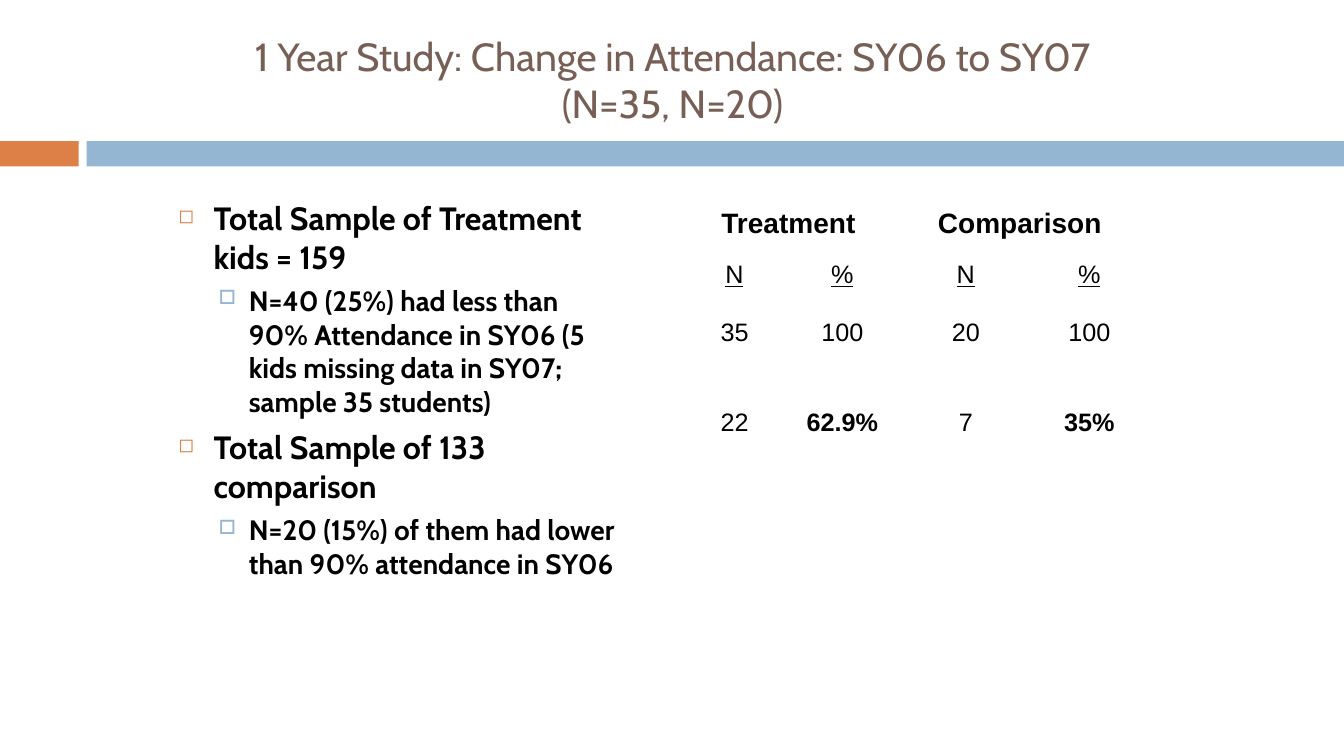
import pptx
import pptx.dml.color
import pptx.enum.shapes
import pptx.enum.text
import pptx.oxml.ns
import pptx.util
from lxml import etree

Inches, Pt = pptx.util.Inches, pptx.util.Pt
ANCHOR, ALIGN = pptx.enum.text.MSO_ANCHOR, pptx.enum.text.PP_ALIGN

# Content
TITLE = "1 Year Study: Change in Attendance: SY06 to SY07 (N=35, N=20)"
SAMPLES = [  # outline level, text
    (0, "Total Sample of Treatment kids = 159"),
    (1, "N=40 (25%) had less than 90% Attendance in SY06 "
        "(5 kids missing data in SY07; sample 35 students)"),
    (0, "Total Sample of 133 comparison"),
    (1, "N=20 (15%) of them had lower than 90% attendance in SY06"),
]
GROUPS = ["Treatment", "Comparison"]
ATTENDANCE = [
    ["N", "%", "N", "%"],
    ["35", "100", "20", "100"],
    ["22", "62.9%", "7", "35%"],
]
COLUMN_WIDTHS = [1.07, 1.07, 1.38, 1.07]
ROW_HEIGHTS = [0.75, 0.5, 0.57, 0.89]

# Look
ORANGE, BLUE, BROWN, BLACK = "DD8047", "94B6D2", "775F55", "000000"
BANDS = [(0, 0.78, ORANGE), (0.86, 12.47, BLUE)]  # left, width, colour
LEVELS = [
    dict(size=23, left=0.35, hang=0.35, before=7, bullet="◻", color=ORANGE, percent=60),
    dict(size=20, left=0.7, hang=0.3, before=5.5, bullet="□", color=BLUE, percent=70),
]


def rgb(value):
    return pptx.dml.color.RGBColor.from_string(value)


def format_runs(para, font, size, color, bold=False, underline=False):
    for span in para.runs:
        span.font.name = font
        span.font.size = Pt(size)
        span.font.color.rgb = rgb(color)
        span.font.bold = bold
        span.font.underline = underline


def set_indent(para, left, hang):
    properties = para._p.get_or_add_pPr()
    properties.set("marL", str(Inches(left)))
    properties.set("indent", str(-Inches(hang)))
    return properties


def add_bullet(properties, look):
    def add(parent, tag, **attributes):
        return etree.SubElement(parent, pptx.oxml.ns.qn(tag), **attributes)

    add(add(properties, "a:buClr"), "a:srgbClr", val=look["color"])
    add(properties, "a:buSzPct", val=str(look["percent"] * 1000))
    add(properties, "a:buChar", char=look["bullet"])


def fill_cell(cell, text, size, bold=False, underline=False):
    cell.text_frame.text = text
    cell.vertical_anchor = ANCHOR.BOTTOM
    para = cell.text_frame.paragraphs[0]
    para.alignment = ALIGN.CENTER
    set_indent(para, 0.3, 0.3)
    format_runs(para, "Arial", size, BLACK, bold, underline)


deck = pptx.Presentation()
deck.slide_width, deck.slide_height = Inches(13.33), Inches(7.5)
page = deck.slides.add_slide(deck.slide_layouts[5])

# Bands under the title
for left, width, color in BANDS:
    band = page.shapes.add_shape(pptx.enum.shapes.MSO_SHAPE.RECTANGLE,
                                 Inches(left), Inches(1.4), Inches(width), Inches(0.25))
    band.shadow.inherit = False
    band.fill.solid()
    band.fill.fore_color.rgb = rgb(color)
    band.line.fill.background()

# Title
title = page.shapes.title
title.left, title.top = Inches(2.17), Inches(0.25)
title.width, title.height = Inches(9), Inches(1.08)
title.text_frame.text = TITLE
title.text_frame.word_wrap = True
title.text_frame.auto_size = pptx.enum.text.MSO_AUTO_SIZE.NONE
title.text_frame.vertical_anchor = ANCHOR.MIDDLE
title.text_frame.paragraphs[0].alignment = ALIGN.CENTER
format_runs(title.text_frame.paragraphs[0], "Cabin", 28, BROWN)

# Attendance table
table = page.shapes.add_table(len(ROW_HEIGHTS), len(COLUMN_WIDTHS), Inches(6.75), Inches(1.67),
                              Inches(sum(COLUMN_WIDTHS)), Inches(sum(ROW_HEIGHTS))).table
table.first_row = table.horz_banding = False
for column, width in zip(table.columns, COLUMN_WIDTHS):
    column.width = Inches(width)
for row, height in zip(table.rows, ROW_HEIGHTS):
    row.height = Inches(height)
for cell in table.iter_cells():
    cell.fill.background()

for index, group in enumerate(GROUPS):
    header = table.cell(0, 2 * index)
    header.merge(table.cell(0, 2 * index + 1))
    fill_cell(header, group, 20, bold=True)
for row_index, values in enumerate(ATTENDANCE, start=1):
    for column_index, value in enumerate(values):
        fill_cell(table.cell(row_index, column_index), value, 18,
                  bold=len(value) > 1 and value.endswith("%"), underline=row_index == 1)

# Sample outline
outline = page.shapes.add_textbox(Inches(1.67), Inches(1.92), Inches(4.58), Inches(5.2)).text_frame
outline.word_wrap = True
outline.text = "\n".join(text for level, text in SAMPLES)
for para, (level, text) in zip(outline.paragraphs, SAMPLES):
    look = LEVELS[level]
    para.level = level
    para.space_before = Pt(look["before"])
    add_bullet(set_indent(para, look["left"], look["hang"]), look)
    format_runs(para, "Cabin", look["size"], BLACK, bold=True)

deck.save("out.pptx")
